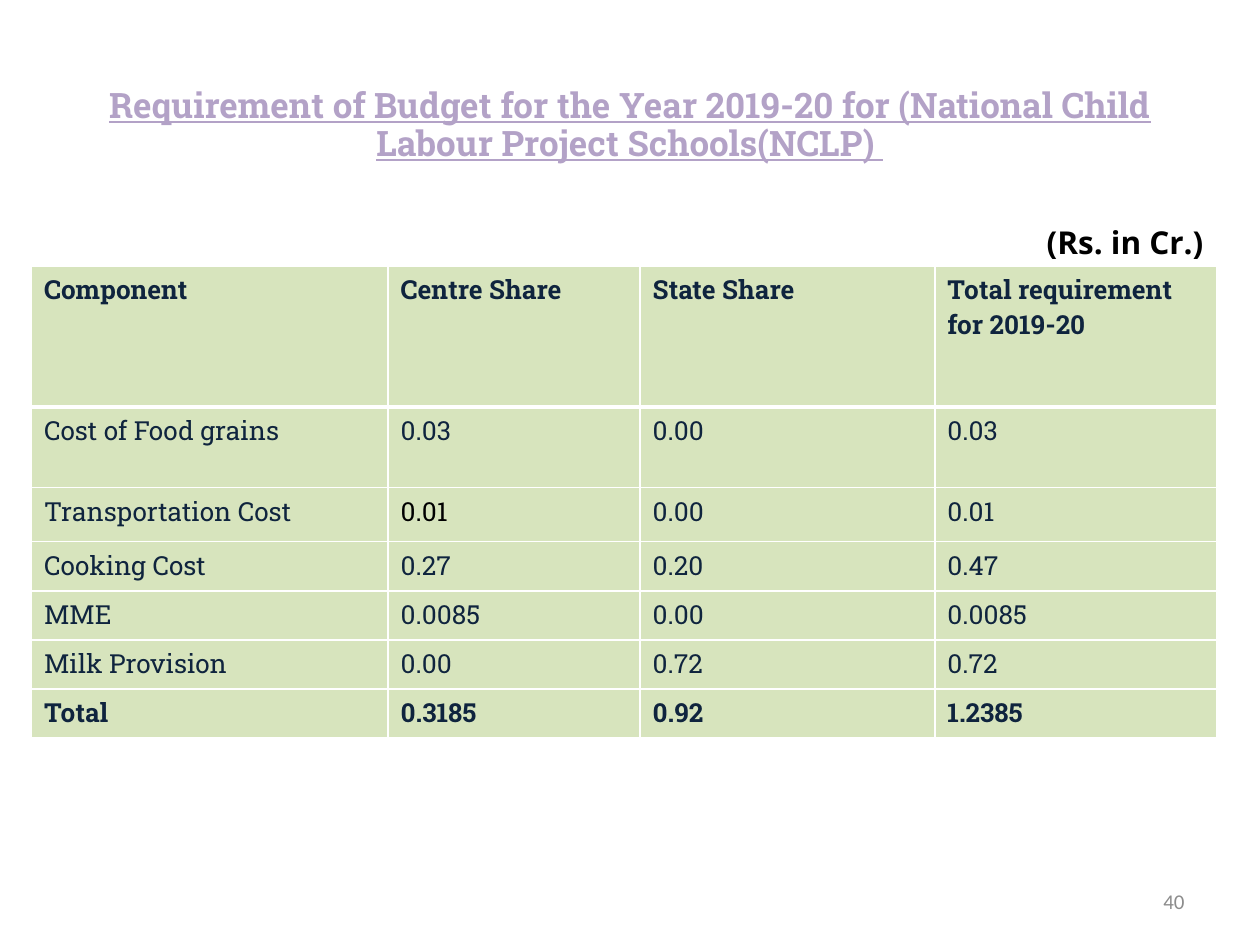
from lxml import etree
from pptx import Presentation
from pptx.dml.color import RGBColor
from pptx.enum.text import MSO_ANCHOR, PP_ALIGN
from pptx.oxml.ns import qn
from pptx.util import Inches, Pt

TOP, MID = MSO_ANCHOR.TOP, MSO_ANCHOR.MIDDLE
LEFT, CENTER, RIGHT = PP_ALIGN.LEFT, PP_ALIGN.CENTER, PP_ALIGN.RIGHT

SLAB, SANS, BODY = "Roboto Slab", "Open Sans", "Calibri"
NAVY, BLACK, WHITE = "0F243E", "000000", "FFFFFF"
LILAC, GREEN, GRAY = "B3A2C7", "D7E4BD", "8C8C8C"

COLS = [2.83, 2, 2.34, 2.24]
ROWS = [1.12, 0.64, 0.43] + [0.39] * 4
BUDGET = [
    ["Component", "Centre Share", "State Share", "Total requirement for 2019-20"],
    ["Cost of Food grains", "0.03", "0.00", "0.03"],
    ["Transportation Cost", "0.01", "0.00", "0.01"],
    ["Cooking Cost", "0.27", "0.20", "0.47"],
    ["MME", "0.0085", "0.00", "0.0085"],
    ["Milk Provision", "0.00", "0.72", "0.72"],
    ["Total", "0.3185", "0.92", "1.2385"],
]


def color(code):
    return RGBColor.from_string(code)


class Page:
    """Holds the slide and draws each kind of element on it."""

    def __init__(self, slide):
        self.slide = slide

    def words(self, para, text, size, font, ink, bold=False, line=False):
        run = para.add_run()
        run.text = text
        run.font.size = Pt(size)
        run.font.name = font
        run.font.bold = bold
        run.font.underline = line
        run.font.color.rgb = color(ink)

    def label(self, box, text, size, font, ink, align=LEFT, anchor=TOP,
              space=1.0, **style):
        frame = self.slide.shapes.add_textbox(*map(Inches, box)).text_frame
        frame.word_wrap = True
        frame.vertical_anchor = anchor
        para = frame.paragraphs[0]
        para.alignment = align
        para.line_spacing = space
        self.words(para, text, size, font, ink, **style)

    def edge(self, cell, sides):
        # Borders must come before the fill in the cell properties
        props = cell._tc.get_or_add_tcPr()
        for spot, (side, width) in enumerate(sides.items()):
            line = etree.Element(qn("a:ln" + side), w=str(Pt(width)))
            fill = etree.SubElement(line, qn("a:solidFill"))
            etree.SubElement(fill, qn("a:srgbClr"), val=WHITE)
            props.insert(spot, line)

    def table(self, left, top, cols, rows, data):
        box = map(Inches, (left, top, sum(cols), sum(rows)))
        grid = self.slide.shapes.add_table(len(rows), len(cols), *box).table
        for col, width in zip(grid.columns, cols):
            col.width = Inches(width)
        last = len(rows) - 1
        for r, (row, height) in enumerate(zip(grid.rows, rows)):
            row.height = Inches(height)
            for c, cell in enumerate(row.cells):
                cell.fill.solid()
                cell.fill.fore_color.rgb = color(GREEN)
                self.edge(cell, {"L": 1, "R": 1, "T": 3 if r == 1 else 1,
                                 "B": 3 if r == 0 else 1})
                ink = BLACK if (r, c) == (2, 1) else NAVY
                self.words(cell.text_frame.paragraphs[0], data[r][c], 15,
                           SLAB, ink, bold=r in (0, last))


def main():
    deck = Presentation()
    deck.slide_width, deck.slide_height = Inches(10), Inches(7.5)
    page = Page(deck.slides.add_slide(deck.slide_layouts[6]))

    # Title
    page.label((0.5, 0.5, 9, 1),
               "Requirement of Budget for the Year 2019-20 for "
               "(National Child Labour Project Schools(NCLP) ",
               20, SLAB, LILAC, CENTER, MID, 0.9, bold=True, line=True)

    # Page number
    page.label((7.17, 6.95, 2.33, 0.4), "40", 12, BODY, GRAY, RIGHT, MID)

    # Budget table with its unit
    page.table(0.25, 2.11, COLS, ROWS, BUDGET)
    page.label((6.33, 1.72, 3.32, 0.4), "(Rs. in Cr.)", 18, SANS, BLACK,
               RIGHT, bold=True)

    deck.save("out.pptx")


if __name__ == "__main__":
    main()
